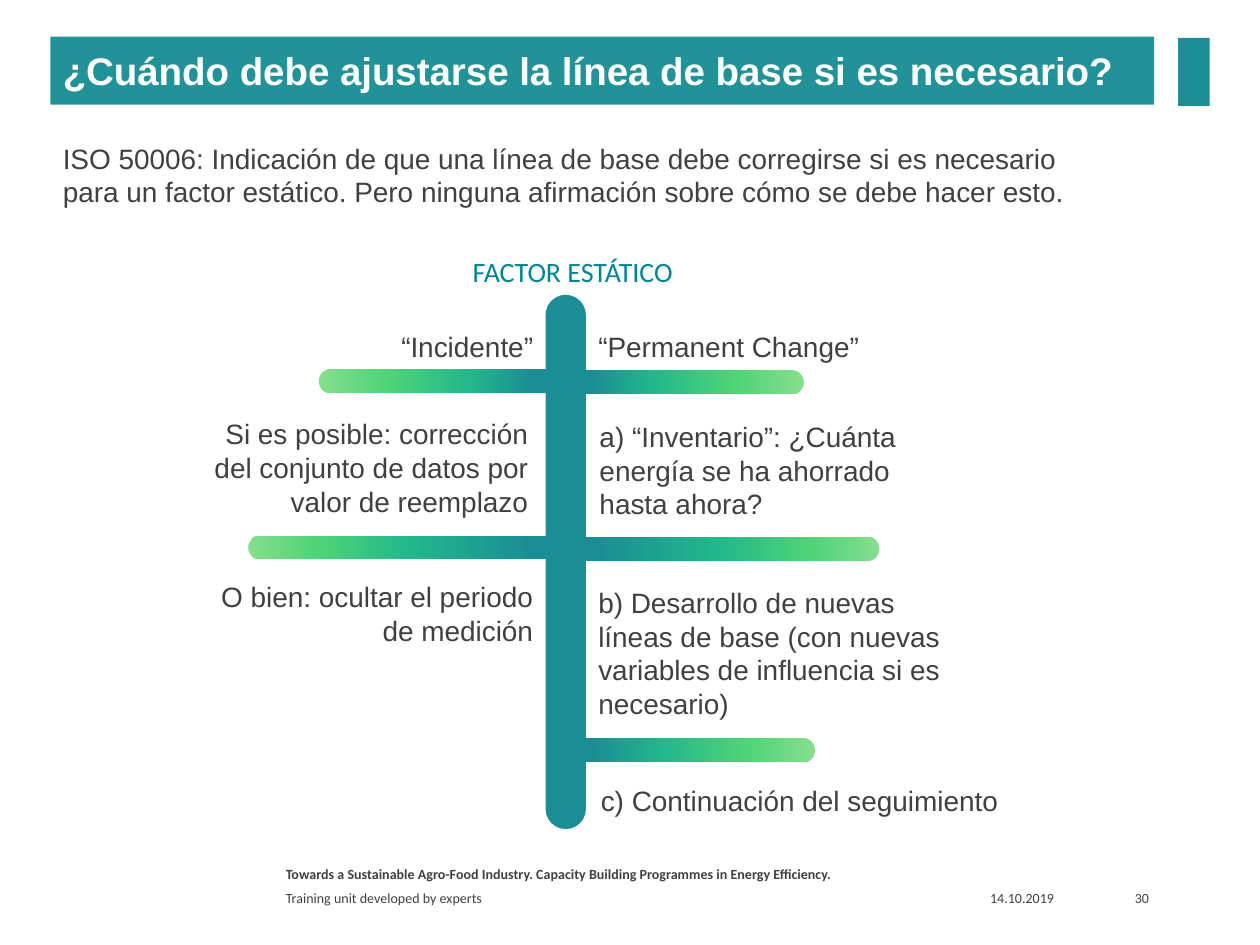
from copy import deepcopy

from pptx import Presentation
from pptx import util as u
from pptx.dml import color
from pptx.enum import shapes, text

COLORS = {
    "title": "209298",
    "teal": "1B8E95",
    "heading": "008595",
    "body": "404040",
    "white": "FFFFFF",
    "tip": "86DE8D",
    "light": "4FD476",
    "mid": "22B88B",
}
LEFT, CENTER, RIGHT = text.PP_ALIGN.LEFT, text.PP_ALIGN.CENTER, text.PP_ALIGN.RIGHT
TOP, MIDDLE = text.MSO_ANCHOR.TOP, text.MSO_ANCHOR.MIDDLE


def rgb(name):
    return color.RGBColor.from_string(COLORS[name])


def inches(*lengths):
    return [u.Inches(length) for length in lengths]


def write(shape, words, size=16, font="Arial", ink="body", bold=False, align=LEFT, anchor=TOP):
    frame = shape.text_frame
    frame.word_wrap = True
    frame.vertical_anchor = anchor
    frame.text = words
    line = frame.paragraphs[0]
    line.alignment = align
    style = line.runs[0].font
    style.name, style.size, style.bold = font, u.Pt(size), bold
    style.color.rgb = rgb(ink)


def add_label(slide, box, words, **style):
    label = slide.shapes.add_textbox(*inches(*box))
    write(label, words, **style)
    return label


def add_block(slide, box, fill, rounded=False):
    kind = shapes.MSO_SHAPE.ROUNDED_RECTANGLE if rounded else shapes.MSO_SHAPE.RECTANGLE
    block = slide.shapes.add_shape(kind, *inches(*box))
    block.shadow.inherit = False
    block.line.fill.background()
    block.fill.solid()
    block.fill.fore_color.rgb = rgb(fill)
    if rounded:
        block.adjustments[0] = 0.5
    return block


def add_branch(slide, box, positions, mirrored):
    branch = add_block(slide, box, "teal", rounded=True)
    branch.fill.gradient()
    branch.fill.gradient_angle = 0
    stop_list = branch.fill.gradient_stops[0]._gs.getparent()
    for stop in list(stop_list):
        stop_list.append(deepcopy(stop))
    names = ("tip", "light", "mid", "teal")
    for stop, position, name in zip(branch.fill.gradient_stops, positions, names):
        stop.position = position
        stop.color.rgb = rgb(name)
    branch.rotation = 180 if mirrored else 0


def add_header(slide, left, top, width, height):
    title = add_block(slide, (left, top, width, height), "title")
    write(title, "¿Cuándo debe ajustarse la línea de base si es necesario?",
          size=22, ink="white", bold=True, anchor=MIDDLE)
    add_block(slide, (left + width + 0.19, top + 0.01, 0.25, height), "teal")


def add_intro(slide, *box):
    add_label(slide, box, "ISO 50006: Indicación de que una línea de base debe corregirse si es "
              "necesario para un factor estático. Pero ninguna afirmación sobre cómo se debe "
              "hacer esto.")


def add_tree(slide, left, top, width, height):
    trunk_width, trunk_top = 0.32, 0.37
    trunk_left = left + 2.81
    add_block(slide, (trunk_left, top + trunk_top, trunk_width, height - trunk_top),
              "teal", rounded=True)
    add_label(slide, (left + 2, top, 2.05, 0.37), "FACTOR ESTÁTICO",
              font="Calibri", ink="heading", align=CENTER)

    short, long = (0, 0.28, 0.62, 0.88), (0, 0.22, 0.52, 0.92)
    branches = [
        (1.01, 0.96, 1.92, short, False),
        (2.94, 0.97, 1.92, short, True),
        (0.45, 2.28, 2.44, long, False),
        (3.02, 2.29, 2.44, long, True),
        (3.03, 3.89, 1.92, (0, 0.28, 0.62, 0.92), True),
    ]
    for x, y, length, positions, mirrored in branches:
        add_branch(slide, (left + x, top + y, length, 0.19), positions, mirrored)

    labels = [
        (1.3, 0.6, 1.51, 0.37, RIGHT, "“Incidente”"),
        (0, 1.29, 2.77, 0.91, RIGHT,
         "Si es posible: corrección del conjunto de datos por valor de reemplazo"),
        (0.04, 2.58, 2.77, 0.64, RIGHT, "O bien: ocultar el periodo de medición"),
        (3.13, 0.6, 2.67, 0.37, LEFT, "“Permanent Change”"),
        (3.14, 1.31, 2.77, 0.91, LEFT,
         "a) “Inventario”: ¿Cuánta energía se ha ahorrado hasta ahora?"),
        (3.13, 2.63, 2.92, 1.18, LEFT,
         "b) Desarrollo de nuevas líneas de base (con nuevas variables de influencia si es "
         "necesario)"),
        (3.15, 4.2, width - 3.15, 0.37, LEFT, "c) Continuación del seguimiento"),
    ]
    for x, y, label_width, label_height, align, words in labels:
        add_label(slide, (left + x, top + y, label_width, label_height), words, align=align)


def add_footer(slide, left, top, width, height):
    small = {"size": 8, "font": "Calibri"}
    row = top + height - 0.2
    add_label(slide, (left, top, 5.5, 0.21), "Towards a Sustainable Agro-Food Industry. "
              "Capacity Building Programmes in Energy Efficiency.", bold=True, **small)
    add_label(slide, (left, row, 5.5, 0.2), "Training unit developed by experts",
              anchor=MIDDLE, **small)
    add_label(slide, (left + width - 1.4, row, 0.83, 0.2), "14.10.2019",
              anchor=MIDDLE, **small)
    number = add_label(slide, (left + width - 0.56, row, 0.56, 0.2), "30",
                       align=RIGHT, anchor=MIDDLE, **small)
    number.text_frame.margin_right = u.Inches(0.04)


def main():
    deck = Presentation()
    deck.slide_width, deck.slide_height = inches(10, 7.5)
    slide = deck.slides.add_slide(deck.slide_layouts[6])
    add_header(slide, 0.4, 0.29, 8.76, 0.54)
    add_intro(slide, 0.4, 1.07, 8.5, 1.18)
    add_tree(slide, 1.52, 1.97, 6.65, 4.61)
    add_footer(slide, 2.17, 6.82, 6.99, 0.41)
    deck.save("out.pptx")


if __name__ == "__main__":
    main()
